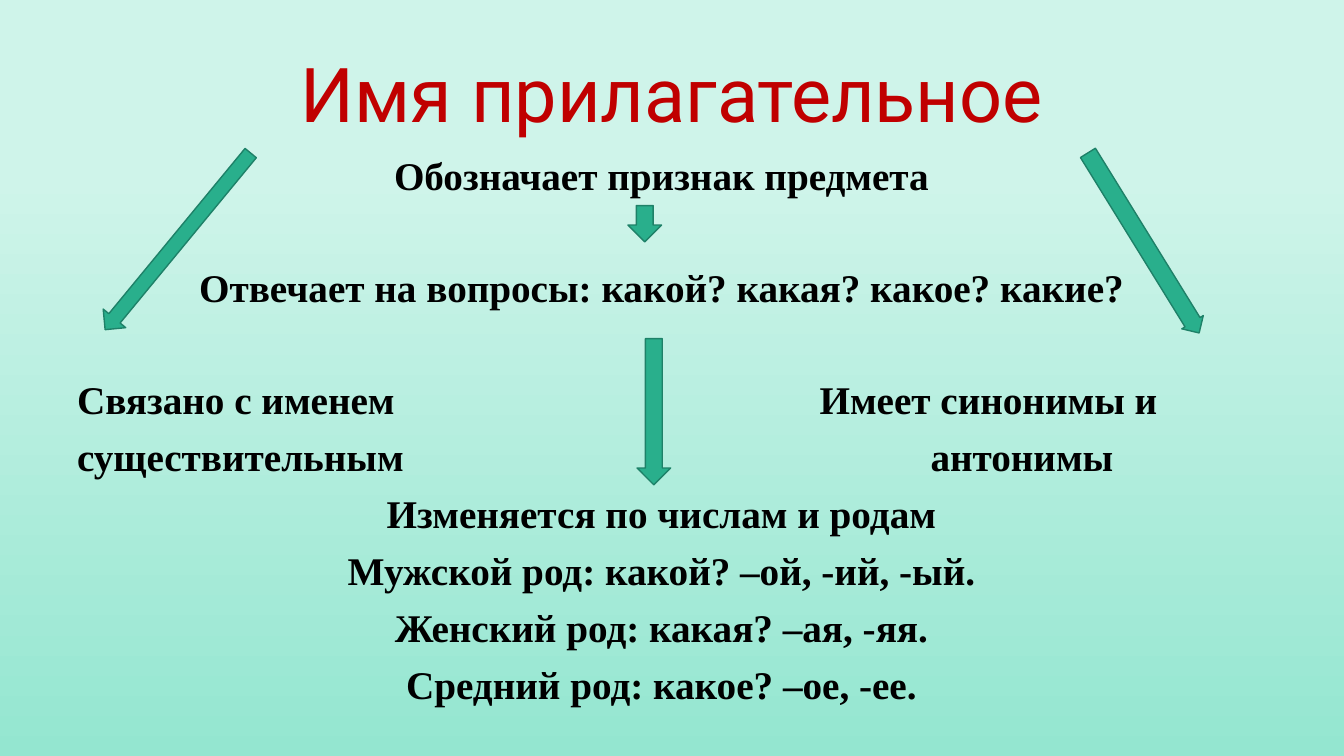
from pptx import Presentation
from pptx.dml.color import RGBColor
from pptx.enum.shapes import MSO_SHAPE as Shape
from pptx.enum.text import MSO_ANCHOR as Anchor, PP_ALIGN as Align
from pptx.oxml.ns import qn
from pptx.util import Inches, Pt
from lxml.etree import SubElement

WIDE, HIGH = Inches(13.333), Inches(7.5)
CELL = WIDE / 40
PALE = RGBColor(0xCF, 0xF4, 0xEA)
MINT = RGBColor(0x94, 0xE6, 0xD0)
GREEN = RGBColor(0x29, 0xAF, 0x8C)
DARK = RGBColor(0x1E, 0x81, 0x68)
RED = RGBColor(0xC0, 0x00, 0x00)
BLACK = RGBColor(0, 0, 0)

LINE = 39.3
GAP = 7.1
FACTS = [
    ("Обозначает признак предмета", 0, None),
    ("Отвечает на вопросы: какой? какая? какое? какие?", 1, None),
    ("Связано с именем\tИмеет синонимы и", 1, 22.1),
    ("существительным\tантонимы", 0, 25.4),
    ("Изменяется по числам и родам", 0, None),
    ("Мужской род: какой? –ой, -ий, -ый.", 0, None),
    ("Женский род: какая? –ая, -яя.", 0, None),
    ("Средний род: какое? –ое, -ее.", 0, None),
]
ARROWS = [
    ((16.69, 1.77, 1, 1.08), 0, 0.5),
    ((2.86, -0.57, 0.87, 6.81), 39.5, 0.5),
    ((31.66, -0.27, 0.75, 6.3), 328.3, 0.7),
    ((16.96, 5.73, 1, 4.35), 0, 0.5),
]


def cells(*nums):
    """Turn grid cells into slide lengths."""
    return [round(n * CELL) for n in nums]


def frame(slide, box, anchor=Anchor.TOP):
    """Add a wrapping text box and return its frame."""
    body = slide.shapes.add_textbox(*cells(*box)).text_frame
    body.word_wrap = True
    body.vertical_anchor = anchor
    return body


def write(para, text, font="Times New Roman", size=28, color=BLACK,
          bold=False, align=Align.CENTER, before=0, lead=1.0, tab=None):
    """Fill a paragraph with formatted text."""
    para.alignment = align
    para.line_spacing = lead
    para.space_before = Pt(before)
    if tab:
        stops = SubElement(para._p.get_or_add_pPr(), qn("a:tabLst"))
        SubElement(stops, qn("a:tab"), pos=str(cells(tab)[0]), algn="l")
    run = para.add_run()
    run.text = text
    run.font.name, run.font.size, run.font.bold = font, Pt(size), bold
    run.font.color.rgb = color


def paint(slide):
    """Shade the background from pale to mint."""
    fill = slide.background.fill
    fill.gradient()
    fill.gradient_angle = 270
    for stop, color, place in zip(fill.gradient_stops, (PALE, MINT), (0.23, 1)):
        stop.color.rgb = color
        stop.position = place


def title(slide, box):
    """Place the heading at the foot of its box."""
    body = frame(slide, box, Anchor.BOTTOM)
    write(body.paragraphs[0], "Имя прилагательное",
          font="Roboto", size=54, color=RED, lead=0.9)


def facts(slide, box):
    """List the facts, with skipped lines as spacing."""
    body = frame(slide, box)
    for i, (text, skip, tab) in enumerate(FACTS):
        para = body.add_paragraph() if i else body.paragraphs[0]
        write(para, text, bold=True, tab=tab,
              align=Align.LEFT if tab else Align.CENTER,
              before=GAP + skip * LINE if i else 0)


def arrows(slide, box):
    """Draw the arrows that link the facts in the box."""
    left, top = box[:2]
    for (x, y, w, h), turn, stem in ARROWS:
        arrow = slide.shapes.add_shape(
            Shape.DOWN_ARROW, *cells(left + x, top + y, w, h))
        arrow.shadow.inherit = False
        arrow.rotation = turn
        arrow.adjustments[0] = stem
        arrow.fill.solid()
        arrow.fill.fore_color.rgb = GREEN
        arrow.line.color.rgb = DARK
        arrow.line.width = Pt(1)


def main():
    """Build and save the slide."""
    deck = Presentation()
    deck.slide_width, deck.slide_height = WIDE, HIGH
    slide = deck.slides.add_slide(deck.slide_layouts[6])
    main_box = (2, 4.35, 35.37, 18.15)
    paint(slide)
    title(slide, (5, 1.56, 30, 2.73))
    facts(slide, main_box)
    arrows(slide, main_box)
    deck.save("out.pptx")


if __name__ == "__main__":
    main()
